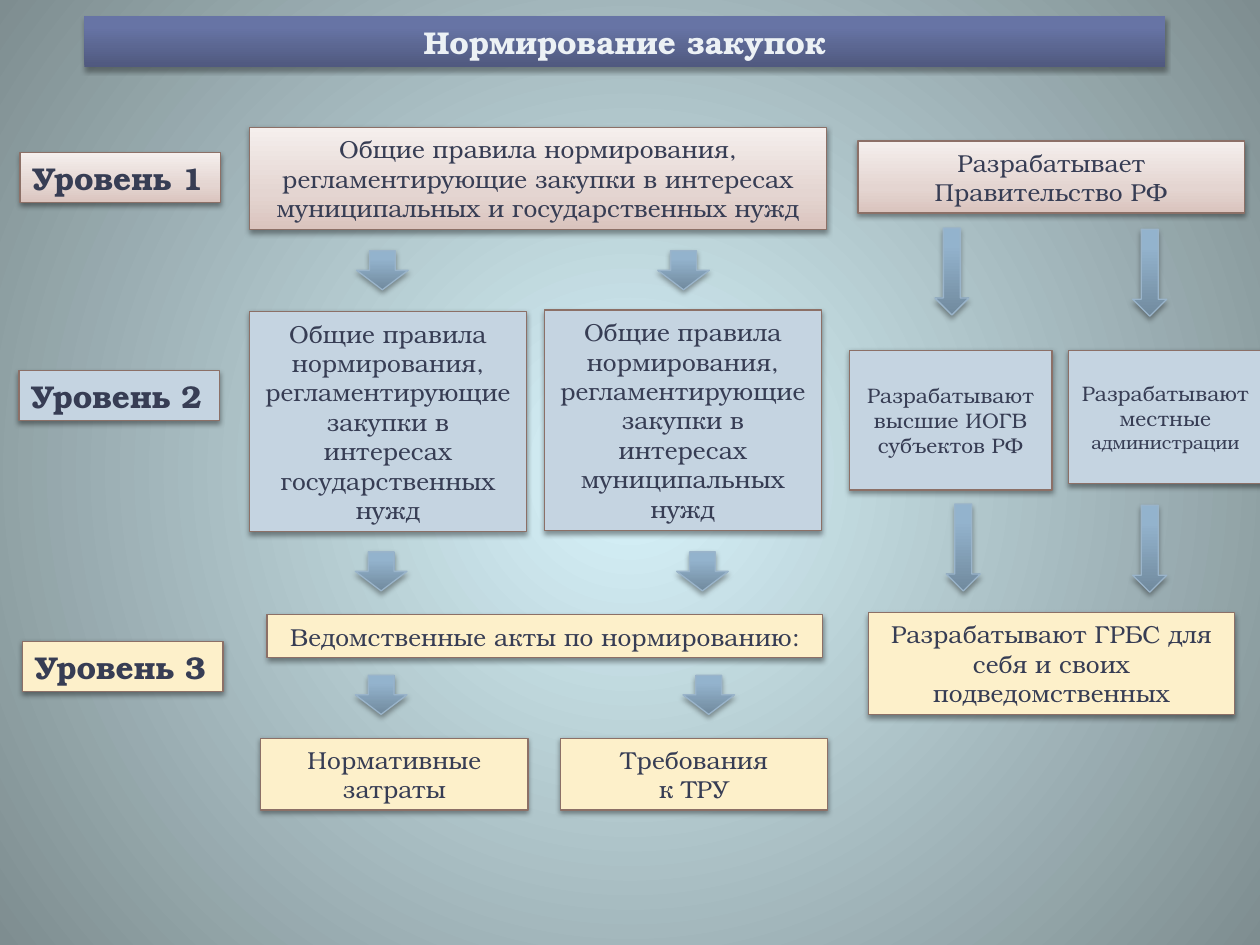
from dataclasses import dataclass
from typing import Optional, Union

from lxml import etree
from pptx import Presentation
from pptx.dml.color import RGBColor
from pptx.enum import shapes, text
from pptx.oxml import ns
from pptx.util import Inches, Pt

FONT = "TeX Gyre Bonum"
INK = RGBColor(0x37, 0x3D, 0x54)
PALE = RGBColor(0xEC, 0xF1, 0xF5)
EDGE = RGBColor(0x8C, 0x70, 0x67)
RIM = RGBColor(0x9A, 0xB4, 0xCA)
BLUE = RGBColor(0xC5, 0xD4, 0xE1)
CREAM = RGBColor(0xFD, 0xF0, 0xCA)
Grade = tuple[tuple[int, RGBColor], ...]
ROSE: Grade = (
    (0, RGBColor(0xDA, 0xC4, 0xBE)),
    (35, RGBColor(0xE4, 0xD5, 0xD1)),
    (100, RGBColor(0xF5, 0xEF, 0xED)),
)
NAVY: Grade = (
    (0, RGBColor(0x50, 0x59, 0x7F)),
    (80, RGBColor(0x67, 0x74, 0xA5)),
    (100, RGBColor(0x67, 0x74, 0xA7)),
)
STEEL: Grade = (
    (0, RGBColor(0x71, 0x8A, 0x9E)),
    (80, RGBColor(0x93, 0xB3, 0xCD)),
    (100, RGBColor(0x93, 0xB4, 0xCF)),
)
MIST: Grade = (
    (0, RGBColor(0xD9, 0xF5, 0xFC)),
    (100, RGBColor(0x7E, 0x8D, 0x90)),
)


@dataclass(frozen=True)
class Box:
    left: float
    top: float
    width: float
    height: float
    words: str
    fill: Union[RGBColor, Grade]
    size: float = 14
    ink: RGBColor = INK
    edge: Optional[RGBColor] = EDGE
    bold: bool = False
    wrap: bool = True


@dataclass(frozen=True)
class Arrow:
    left: float
    top: float
    width: float
    height: float


def add_node(node, tag: str, **attrs):
    return etree.SubElement(node, ns.qn(tag), {k: str(v) for k, v in attrs.items()})


def set_grade(holder, grade: Grade, round_fill: bool = False) -> None:
    old = holder.find(ns.qn("a:solidFill"))
    new = etree.Element(ns.qn("a:gradFill"), rotWithShape="1")
    stops = add_node(new, "a:gsLst")
    for spot, color in grade:
        add_node(add_node(stops, "a:gs", pos=spot * 1000), "a:srgbClr", val=color)
    if round_fill:
        way = add_node(new, "a:path", path="circle")
        add_node(way, "a:fillToRect", l=50000, t=50000, r=50000, b=50000)
    else:
        add_node(new, "a:lin", ang=270 * 60000, scaled=0)
    holder.replace(old, new)


def set_shade(shape, alpha: int, drop: float) -> None:
    shape.shadow.inherit = False
    effect = shape.element.spPr.find(ns.qn("a:effectLst"))
    shade = add_node(effect, "a:outerShdw", blurRad=Pt(3.1), dist=Pt(drop),
                     dir=90 * 60000, rotWithShape=0)
    add_node(add_node(shade, "a:srgbClr", val="000000"), "a:alpha", val=alpha * 1000)


def draw_shape(slide, kind, item: Union[Box, Arrow], fill: Union[RGBColor, Grade],
               edge: Optional[RGBColor]):
    shape = slide.shapes.add_shape(
        kind, Inches(item.left), Inches(item.top), Inches(item.width), Inches(item.height))
    shape.fill.solid()
    if isinstance(fill, RGBColor):
        shape.fill.fore_color.rgb = fill
    else:
        set_grade(shape.element.spPr, fill)
    if edge is None:
        shape.line.fill.background()
    else:
        shape.line.color.rgb = edge
        shape.line.width = Pt(0.75)
    return shape


def style_run(run, box: Box) -> None:
    run.font.name = FONT
    run.font.size = Pt(box.size)
    run.font.bold = box.bold
    run.font.color.rgb = box.ink


def draw_box(slide, box: Box):
    shape = draw_shape(slide, shapes.MSO_SHAPE.RECTANGLE, box, box.fill, box.edge)
    set_shade(shape, 38 if box.edge else 35, 1.6 if box.edge else 1.8)
    frame = shape.text_frame
    frame.text = box.words
    frame.word_wrap = box.wrap
    frame.vertical_anchor = text.MSO_ANCHOR.MIDDLE
    for para in frame.paragraphs:
        para.alignment = text.PP_ALIGN.CENTER if box.wrap else text.PP_ALIGN.LEFT
        for run in para.runs:
            style_run(run, box)
    return shape


def draw_arrow(slide, arrow: Arrow) -> None:
    shape = draw_shape(slide, shapes.MSO_SHAPE.DOWN_ARROW, arrow, STEEL, RIM)
    set_shade(shape, 35, 1.8)


RULES = "Общие правила нормирования,\nрегламентирующие закупки в интересах\n"
LEVELS = [
    Box(left, top, 1.59, 0.4, f"Уровень {num}", fill, 18, bold=True, wrap=False)
    for num, (left, top, fill) in enumerate(
        [(0.16, 1.21, ROSE), (0.15, 2.94, BLUE), (0.18, 5.09, CREAM)], 1)
]
BOXES = [
    Box(0.67, 0.13, 8.58, 0.4, "Нормирование закупок", NAVY, 18, PALE, None, True),
    *LEVELS,
    Box(1.98, 1.01, 4.58, 0.81, RULES + "муниципальных и государственных нужд", ROSE),
    Box(6.81, 1.12, 3.07, 0.57, "Разрабатывает Правительство РФ", ROSE),
    Box(1.98, 2.47, 2.2, 1.75, RULES + "государственных нужд", BLUE),
    Box(4.32, 2.46, 2.2, 1.75, RULES + "муниципальных нужд", BLUE),
    Box(6.74, 2.78, 1.61, 1.11, "Разрабатывают высшие ИОГВ\nсубъектов РФ", BLUE, 12),
    Box(2.12, 4.88, 4.41, 0.34, "Ведомственные акты по нормированию:", CREAM),
    Box(6.89, 4.86, 2.91, 0.81,
        "Разрабатывают ГРБС для себя и своих подведомственных", CREAM),
    Box(2.07, 5.86, 2.12, 0.57, "Нормативные затраты", CREAM),
    Box(4.45, 5.86, 2.12, 0.57, "Требования\nк ТРУ", CREAM),
]
LOCAL = Box(8.48, 2.78, 1.54, 1.06, "Разрабатывают местные ", BLUE, 12)
SHORT = [(2.83, 1.99), (5.22, 1.99), (2.82, 4.38), (5.37, 4.38), (2.82, 5.36), (5.42, 5.36)]
LONG = [(7.42, 1.81), (8.99, 1.82), (7.51, 4), (8.99, 4.01)]
ARROWS = [Arrow(*spot, 0.41, 0.31) for spot in SHORT]
ARROWS += [Arrow(*spot, 0.27, 0.69) for spot in LONG]


def main() -> None:
    deck = Presentation()
    deck.slide_width, deck.slide_height = Inches(10), Inches(7.5)
    slide = deck.slides.add_slide(deck.slide_layouts[6])
    slide.background.fill.solid()
    set_grade(slide.element.find(".//" + ns.qn("p:bgPr")), MIST, True)
    for box in BOXES:
        draw_box(slide, box)
    local = draw_box(slide, LOCAL)
    run = local.text_frame.paragraphs[0].add_run()
    run.text = "администрации"
    style_run(run, LOCAL)
    run.font.size = Pt(10.5)
    for arrow in ARROWS:
        draw_arrow(slide, arrow)
    deck.save("out.pptx")


if __name__ == "__main__":
    main()
